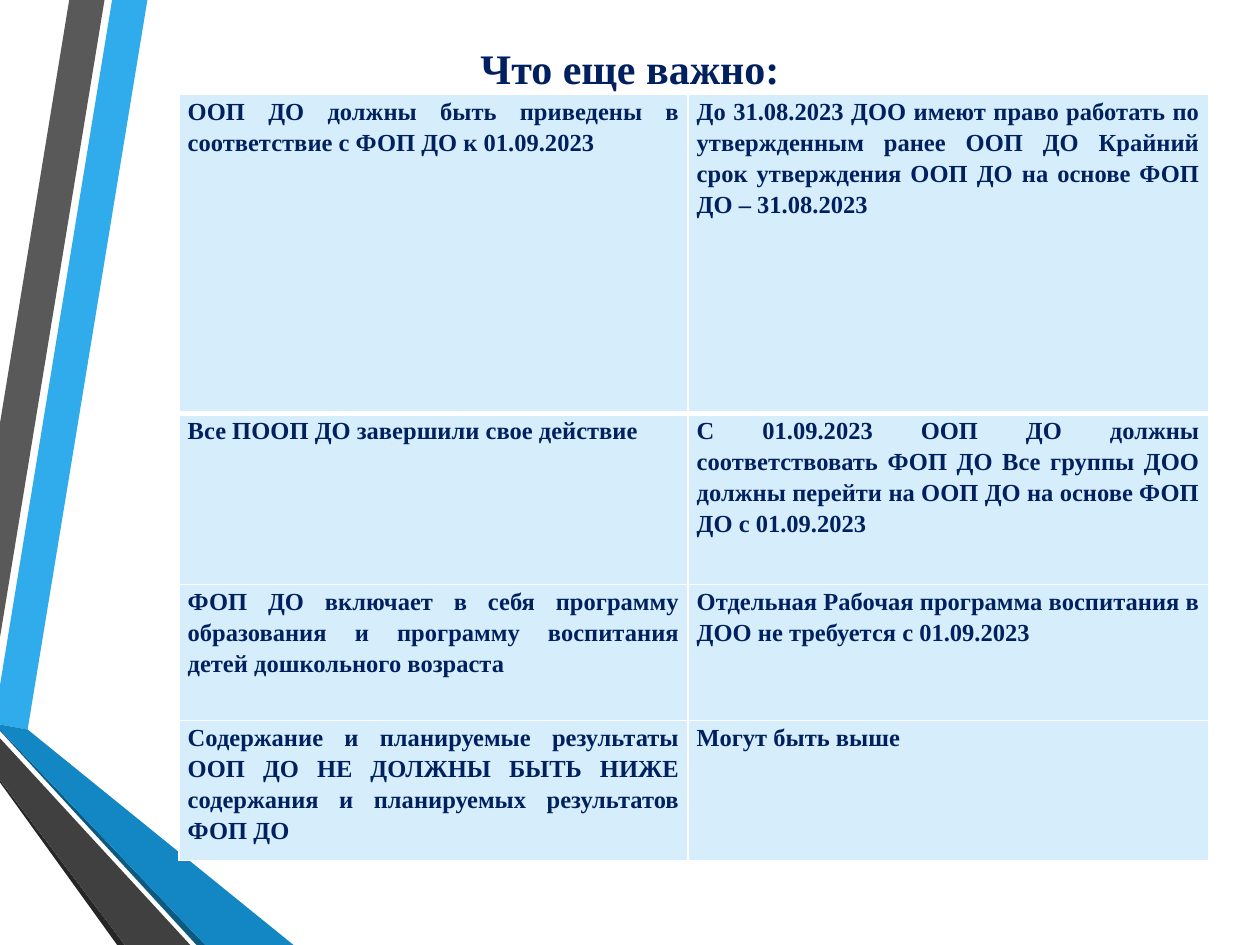
from lxml.etree import SubElement
from pptx import Presentation
from pptx.dml.color import RGBColor
from pptx.enum.text import MSO_ANCHOR as Anchor, PP_ALIGN as Align
from pptx.oxml.ns import qn
from pptx.util import Pt

PX = 9144  # EMU per px, 100 px to the inch
FONT = "Times New Roman"
NAVY, PALE, WHITE = "002060", "D6EEFB", "FFFFFF"

# Each ribbon: colour and outline
RIBBONS = [
    ("30ACEC", [(0, 544), (0, 575), (22, 579), (117, 0), (89, 0)]),
    ("595959", [(83, 0), (55, 0), (0, 336), (0, 506)]),
    ("262626", [(0, 619), (0, 621), (93, 750), (99, 750)]),
    ("0C5A82", [(0, 579), (0, 580), (156, 750), (163, 750)]),
    ("1287C3", [(0, 579), (163, 750), (233, 750), (22, 579), (0, 575)]),
    ("404040", [(0, 619), (99, 750), (151, 750), (0, 586)]),
]
COLUMNS = [404, 413]
ROWS = [
    (253, "ООП ДО должны быть приведены в соответствие с ФОП ДО к 01.09.2023",
     "До 31.08.2023 ДОО имеют право работать по утвержденным ранее ООП ДО "
     "Крайний срок утверждения ООП ДО на основе ФОП ДО – 31.08.2023"),
    (136, "Все ПООП ДО завершили свое действие",
     "С 01.09.2023 ООП ДО должны соответствовать ФОП ДО Все группы ДОО "
     "должны перейти на ООП ДО на основе ФОП ДО с 01.09.2023"),
    (108, "ФОП ДО включает в себя программу образования и программу воспитания "
     "детей дошкольного возраста",
     "Отдельная Рабочая программа воспитания в ДОО не требуется с 01.09.2023"),
    (111, "Содержание и планируемые результаты ООП ДО НЕ ДОЛЖНЫ БЫТЬ НИЖЕ "
     "содержания и планируемых результатов ФОП ДО",
     "Могут быть выше"),
]


def color(value):
    return RGBColor.from_string(value)


def write(frame, text, size, align):
    para = frame.paragraphs[0]
    para.alignment = align
    span = para.add_run()
    span.text = text
    span.font.name = FONT
    span.font.size = Pt(size)
    span.font.bold = True
    span.font.color.rgb = color(NAVY)
    return para


def add_ribbons(page, left, top):
    group = page.shapes.add_group_shape()
    for fill, outline in RIBBONS:
        start, *rest = [(left + x, top + y) for x, y in outline]
        builder = group.shapes.build_freeform(*start, scale=PX)
        builder.add_line_segments(rest, close=True)
        ribbon = builder.convert_to_shape()
        ribbon.shadow.inherit = False
        ribbon.fill.solid()
        ribbon.fill.fore_color.rgb = color(fill)
        ribbon.line.fill.background()


def add_title(page, left, top, width, height):
    title = page.shapes.title
    title.left, title.top = left * PX, top * PX
    title.width, title.height = width * PX, height * PX
    title.text_frame.vertical_anchor = Anchor.MIDDLE
    write(title.text_frame, "Что еще важно:", 24, Align.CENTER)


def set_borders(cell, **widths):
    """Draw white borders, 1 pt unless a side (L, R, T, B) is given a width."""
    props = cell._tc.get_or_add_tcPr()
    for side in "LRTB":
        line = SubElement(props, qn(f"a:ln{side}"), w=str(Pt(widths.get(side, 1))))
        fill = SubElement(line, qn("a:solidFill"))
        SubElement(fill, qn("a:srgbClr"), val=WHITE)


def fill_cell(cell, text):
    cell.margin_left = cell.margin_right = 7 * PX
    cell.margin_top = cell.margin_bottom = 0
    cell.fill.solid()
    cell.fill.fore_color.rgb = color(PALE)
    write(cell.text_frame, text, 14, Align.JUSTIFY).line_spacing = 1.15


def add_rules_table(page, left, top):
    width, height = sum(COLUMNS), sum(row[0] for row in ROWS)
    table = page.shapes.add_table(len(ROWS), len(COLUMNS), left * PX, top * PX,
                                  width * PX, height * PX).table
    table.first_row = table.horz_banding = False
    for column, column_width in zip(table.columns, COLUMNS):
        column.width = column_width * PX
    for i, (row_height, *texts) in enumerate(ROWS):
        table.rows[i].height = row_height * PX
        for cell, text in zip(table.rows[i].cells, texts):
            set_borders(cell, T=3 if i == 1 else 1, B=3 if i == 0 else 1)
            fill_cell(cell, text)


def main():
    deck = Presentation()
    deck.slide_width, deck.slide_height = 1000 * PX, 750 * PX
    page = deck.slides.add_slide(deck.slide_layouts[5])
    add_ribbons(page, 0, 0)
    add_title(page, 50, 8, 900, 92)
    add_rules_table(page, 142, 75)
    deck.save("out.pptx")


if __name__ == "__main__":
    main()
